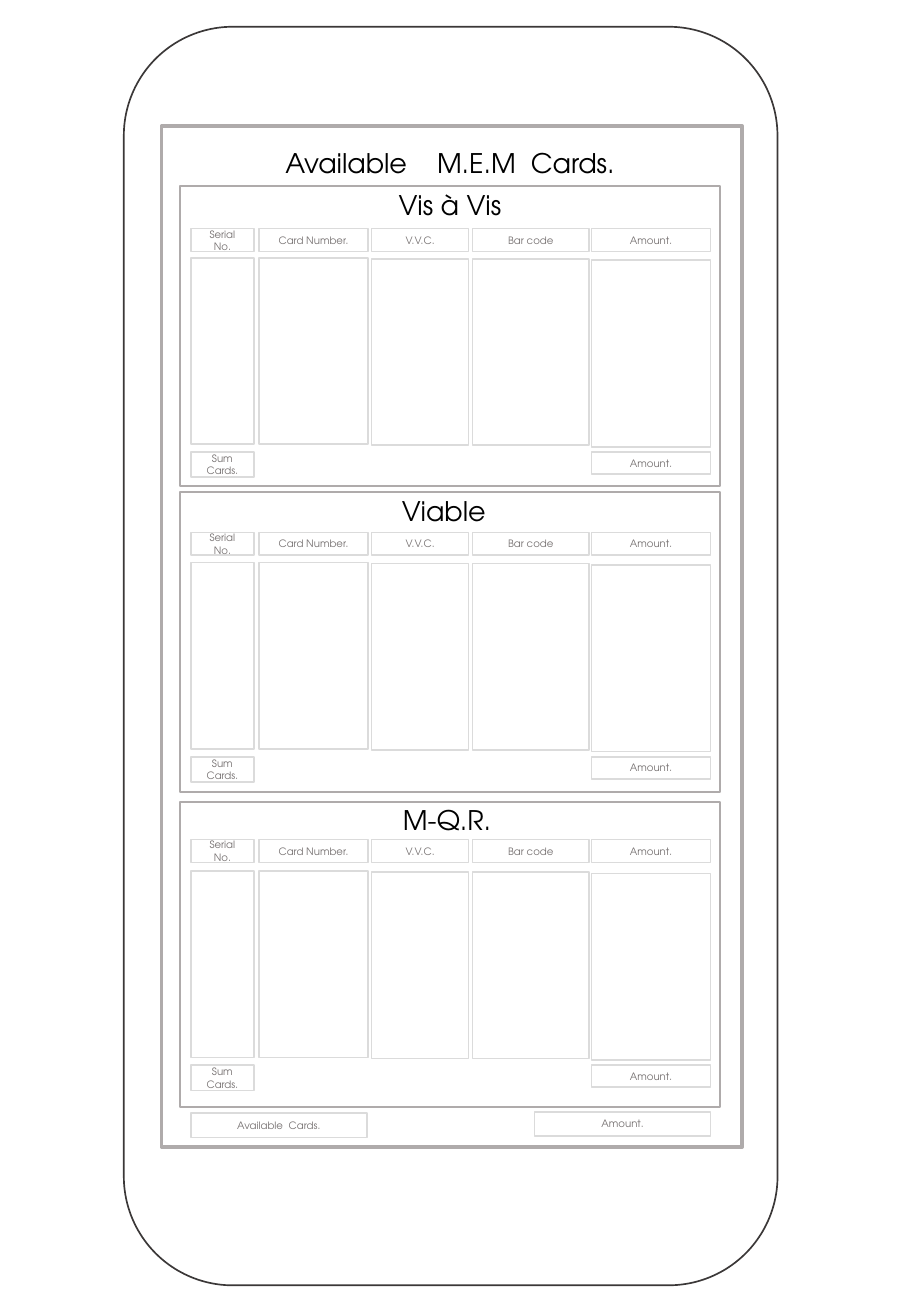
import pptx
import pptx.util
import pptx.dml.color
import pptx.enum.shapes
import pptx.enum.text

Cm, Pt = pptx.util.Cm, pptx.util.Pt
RGBColor = pptx.dml.color.RGBColor
KINDS = pptx.enum.shapes.MSO_SHAPE

WHITE = RGBColor(0xFF, 0xFF, 0xFF)
BLACK = RGBColor(0x00, 0x00, 0x00)
INK = RGBColor(0x3B, 0x38, 0x38)
FRAME = RGBColor(0xAF, 0xAB, 0xAB)
RULE = RGBColor(0xDB, 0xDB, 0xDB)
GREY = RGBColor(0x76, 0x71, 0x71)
FONT = "TeX Gyre Adventor"

# label, left from panel edge, width, drop of the column below the row top
COLUMNS = [
    ("Serial\nNo.", 0.23, 1.32, 0),
    ("Card Number.", 1.65, 2.29, 0),
    ("V.V.C.", 4.01, 2.03, 0.02),
    ("Bar code", 6.12, 2.44, 0.02),
    ("Amount.", 8.61, 2.49, 0.05),
]
# name, panel top, panel height, name shift, header drop, column drop
PANELS = [
    ("Vis à Vis", 3.89, 6.27, 0, 0.89, 1.5),
    ("Viable", 10.29, 6.27, -0.13, 0.84, 1.47),
    ("M-Q.R.", 16.76, 6.38, -0.06, 0.79, 1.45),
]


def add_box(slide, box, line=None, weight=1, kind=KINDS.RECTANGLE):
    shape = slide.shapes.add_shape(kind, *[Cm(side) for side in box])
    shape.shadow.inherit = False
    shape.fill.solid()
    shape.fill.fore_color.rgb = WHITE
    if line is None:
        shape.line.fill.background()
    else:
        shape.line.color.rgb = line
        shape.line.width = Pt(weight)
    return shape


def write(shape, text, size=6, color=GREY):
    """Centre the text in the shape."""
    frame = shape.text_frame
    frame.text = text
    frame.word_wrap = True
    frame.auto_size = pptx.enum.text.MSO_AUTO_SIZE.NONE
    frame.vertical_anchor = pptx.enum.text.MSO_ANCHOR.MIDDLE
    for line in frame.paragraphs:
        line.alignment = pptx.enum.text.PP_ALIGN.CENTER
        line.font.name = FONT
        line.font.size = Pt(size)
        line.font.color.rgb = color


def spread(shape, words, gaps):
    """Join words by spaces widened by the gaps, in hundredths of a point."""
    line = shape.text_frame.paragraphs[0]
    line.clear()
    line.add_run().text = words[0]
    for word, gap in zip(words[1:], gaps):
        space = line.add_run()
        space.text = " "
        space._r.get_or_add_rPr().set("spc", str(gap))
        line.add_run().text = word


def draw_phone(slide, box):
    add_box(slide, box, INK, kind=KINDS.ROUNDED_RECTANGLE)
    left, top = box[:2]
    add_box(slide, (left + 0.79, top + 2.08, 12.14, 21.34), FRAME, 2.25)


def draw_title(slide, box):
    title = slide.shapes.title
    title.left, title.top, title.width, title.height = [Cm(side) for side in box]
    write(title, "", 16, BLACK)
    spread(title, ["Available", "M.E.M", "Cards."], [1330, 440])
    slide.shapes.element.append(title.element)  # bring to the front


def draw_panel(slide, box, name, shift, head, body):
    left, top, width, height = box
    add_box(slide, box, FRAME)
    label = add_box(slide, (left + 2.9 + shift, top + 0.13, width - 5.8, 0.51))
    write(label, name, 16, BLACK)
    for text, start, wide, drop in COLUMNS:
        x = left + start
        write(add_box(slide, (x, top + head, wide, 0.48), RULE), text)
        add_box(slide, (x, top + body + drop, wide, 3.9), RULE)
    foot = top + body + 4.06
    for text, column, tall in (("Sum Cards.", COLUMNS[0], 0.53),
                               ("Amount.", COLUMNS[-1], 0.46)):
        cell = add_box(slide, (left + column[1], foot, column[2], tall), RULE)
        write(cell, text)


def draw_totals(slide, box):
    left, top, width, height = box
    wide = 3.68
    cards = add_box(slide, (left, top, wide, height), RULE)
    write(cards, "")
    spread(cards, ["Available", "Cards."], [170])
    amount = add_box(slide, (left + width - wide, top - 0.03, wide, height), RULE)
    write(amount, "Amount.")


def main():
    deck = pptx.Presentation()
    deck.slide_width, deck.slide_height = Cm(19.05), Cm(27.51)
    slide = deck.slides.add_slide(deck.slide_layouts[5])
    draw_phone(slide, (2.59, 0.56, 13.67, 26.31))
    draw_title(slide, (3.76, 2.9, 11.3, 0.99))
    for name, top, height, shift, head, body in PANELS:
        draw_panel(slide, (3.76, top, 11.3, height), name, shift, head, body)
    draw_totals(slide, (3.99, 23.27, 10.87, 0.51))
    deck.save("out.pptx")


if __name__ == "__main__":
    main()
